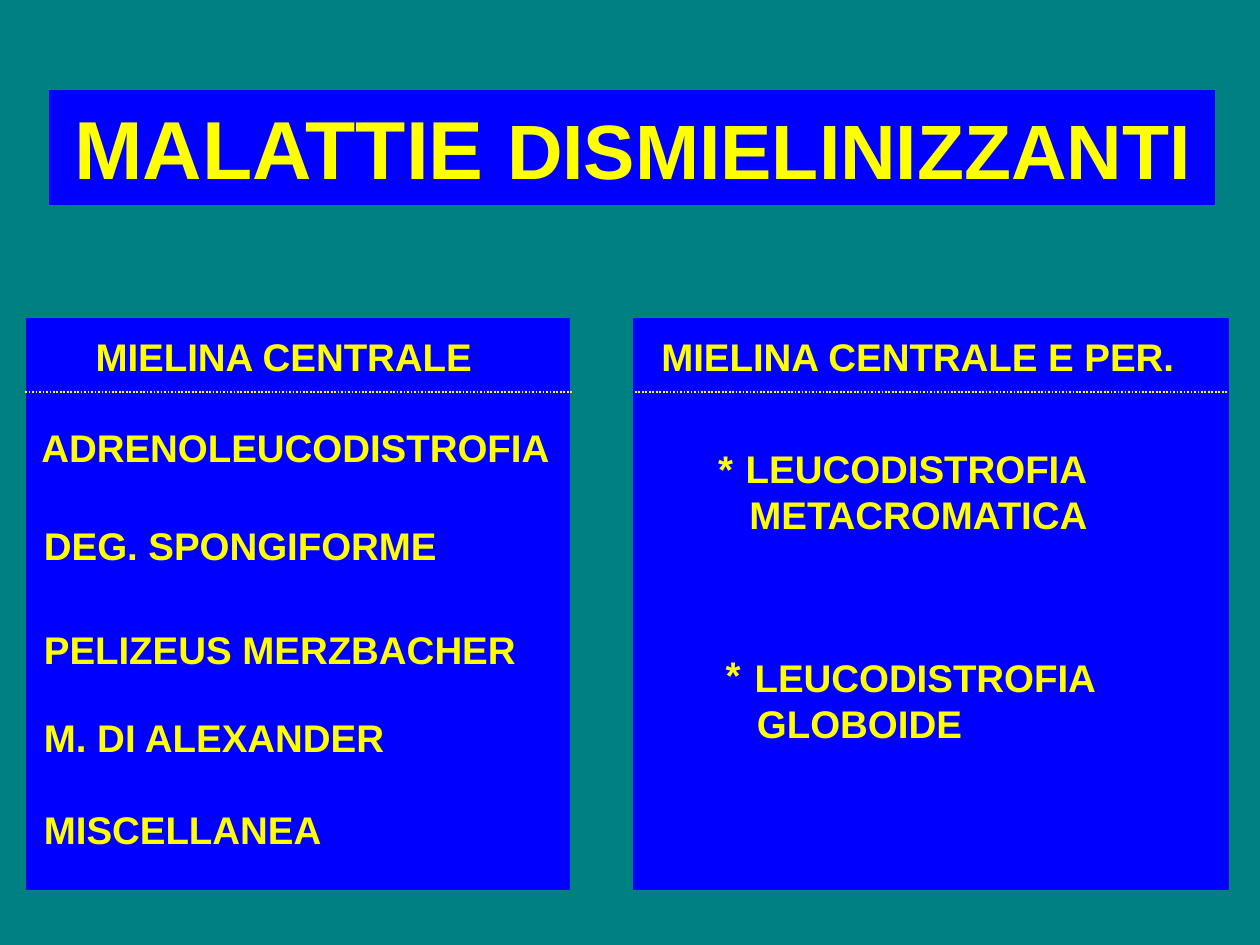
import pptx
import pptx.util
import pptx.dml.color
import pptx.enum.dml
import pptx.enum.shapes
import pptx.enum.text
import pptx.oxml
import pptx.oxml.ns
from pptx.util import Inches

TEAL = pptx.dml.color.RGBColor(0x00, 0x80, 0x80)
BLUE = pptx.dml.color.RGBColor(0x00, 0x00, 0xFF)
YELLOW = pptx.dml.color.RGBColor(0xFF, 0xFF, 0x00)

# Content: the title has one size per word, labels are (text, left, top, width)
TITLE = [("MALATTIE ", 47), ("DISMIELINIZZANTI", 44)]
TITLE_PANEL = (0.4, 0.72, 9.24, 0.9)
COLUMN_PANELS = [(0.21, 2.53, 4.31, 4.53), (5.03, 2.53, 4.72, 4.53)]
RULES = [(0.2, 4.55), (5.04, 9.75)]
RULE_TOP = 3.11
LABEL_SIZE, LABEL_HEIGHT = 22, 0.47
LABELS = [
    # Column headings
    ("MIELINA CENTRALE", 0.66, 2.59, 3.21),
    ("MIELINA CENTRALE E PER.", 5.15, 2.59, 4.29),
    # Left column
    ("ADRENOLEUCODISTROFIA", 0.23, 3.32, 4.24),
    ("DEG. SPONGIFORME", 0.25, 4.09, 3.32),
    ("PELIZEUS MERZBACHER", 0.25, 4.92, 3.95),
    ("M. DI ALEXANDER", 0.25, 5.62, 2.92),
    ("MISCELLANEA", 0.25, 6.35, 2.41),
    # Right column
    ("*", 5.6, 3.48, 0.32),
    ("LEUCODISTROFIA", 5.82, 3.48, 2.92),
    ("METACROMATICA", 5.85, 3.85, 2.93),
    ("*", 5.66, 5.12, 0.32),
    ("LEUCODISTROFIA", 5.89, 5.14, 2.92),
    ("GLOBOIDE", 5.91, 5.51, 1.83),
]
TEXT_SHADOW = (
    f'<a:effectLst {pptx.oxml.ns.nsdecls("a")}>'
    '<a:outerShdw blurRad="38100" dist="38100" dir="2700000" algn="tl">'
    '<a:srgbClr val="000000"/></a:outerShdw></a:effectLst>'
)


def add_panel(page, bounds):
    panel = page.shapes.add_shape(
        pptx.enum.shapes.MSO_SHAPE.RECTANGLE, *map(Inches, bounds))
    panel.shadow.inherit = False
    panel.fill.solid()
    panel.fill.fore_color.rgb = BLUE
    panel.line.color.rgb = BLUE
    panel.line.width = pptx.util.Pt(1)


def add_text(page, spans, bounds, align):
    box = page.shapes.add_textbox(*map(Inches, bounds))
    frame = box.text_frame
    frame.word_wrap = False
    frame.auto_size = pptx.enum.text.MSO_AUTO_SIZE.SHAPE_TO_FIT_TEXT
    para = frame.paragraphs[0]
    para.alignment = align
    para.font.name = "Arial"
    para.font.bold = True
    para.font.color.rgb = YELLOW
    for text, size in spans:
        span = para.add_run()
        span.text = text
        span.font.size = pptx.util.Pt(size)
        span._r.get_or_add_rPr().append(pptx.oxml.parse_xml(TEXT_SHADOW))


def add_rule(page, start, end):
    rule = page.shapes.add_connector(
        pptx.enum.shapes.MSO_CONNECTOR.STRAIGHT,
        Inches(start), Inches(RULE_TOP), Inches(end), Inches(RULE_TOP))
    rule.line.color.rgb = YELLOW
    rule.line.width = pptx.util.Pt(1)
    rule.line.dash_style = pptx.enum.dml.MSO_LINE.ROUND_DOT
    properties = rule._element.spPr
    properties.append(properties.makeelement(pptx.oxml.ns.qn("a:effectLst"), {}))


def main():
    deck = pptx.Presentation()
    deck.slide_width, deck.slide_height = Inches(10), Inches(7.5)
    page = deck.slides.add_slide(deck.slide_layouts[6])
    page.background.fill.solid()
    page.background.fill.fore_color.rgb = TEAL

    # Title
    align = pptx.enum.text.PP_ALIGN
    add_panel(page, TITLE_PANEL)
    add_text(page, TITLE, (0.47, 0.72, 9.11, 0.88), align.CENTER)

    # Columns
    for bounds in COLUMN_PANELS:
        add_panel(page, bounds)
    for text, left, top, width in LABELS:
        add_text(page, [(text, LABEL_SIZE)],
                 (left, top, width, LABEL_HEIGHT), align.LEFT)
    for start, end in RULES:
        add_rule(page, start, end)

    deck.save("out.pptx")


if __name__ == "__main__":
    main()
